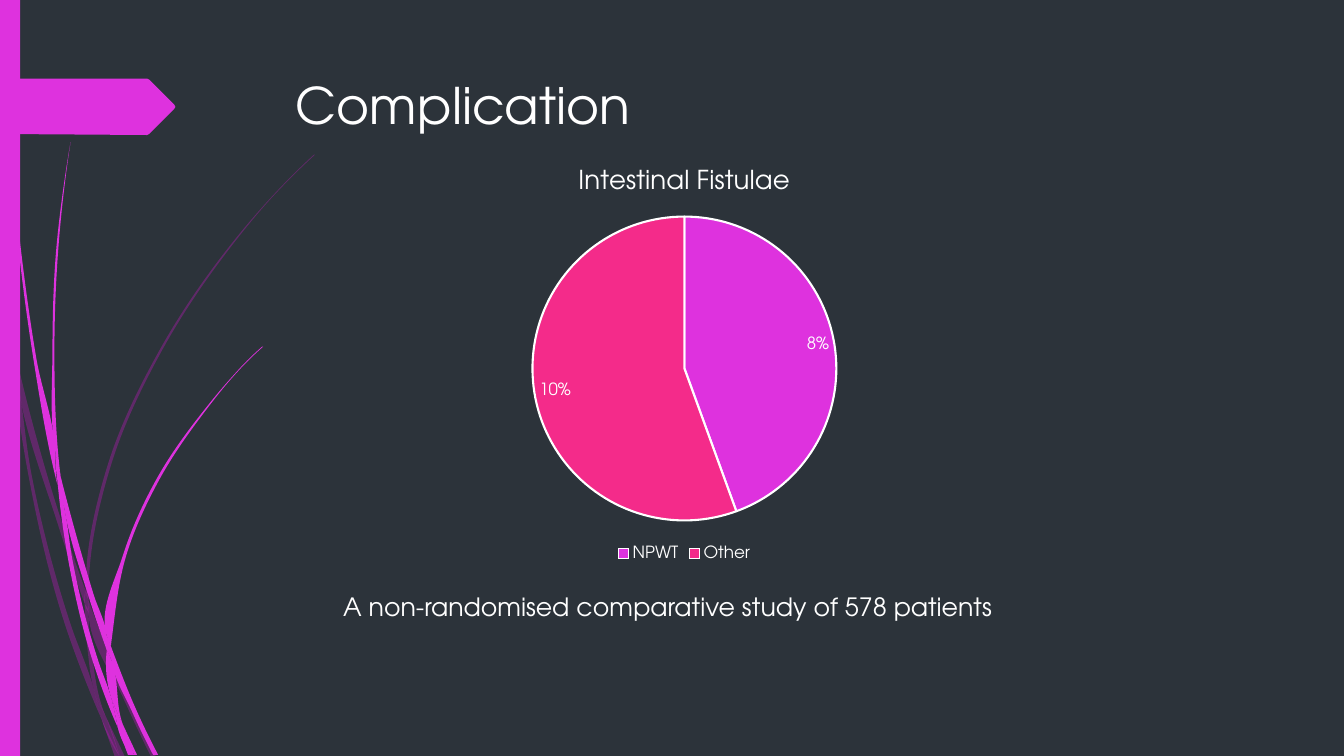
from dataclasses import dataclass
from math import dist

from lxml.etree import Element, SubElement
from pptx import Presentation
from pptx.chart.data import CategoryChartData
from pptx.dml.color import RGBColor
from pptx.enum.chart import XL_CHART_TYPE, XL_LABEL_POSITION, XL_LEGEND_POSITION
from pptx.enum.shapes import MSO_SHAPE
from pptx.enum.text import MSO_ANCHOR
from pptx.oxml.ns import qn
from pptx.util import Emu, Inches, Pt

# Grid: square cells, 75 rows on the slide's height
CELL = Inches(0.1)
COLUMNS, ROWS = 133.33, 75
FONT = "TeX Gyre Adventor"
BACKGROUND, WHITE = "2C333A", "FFFFFF"
MAGENTA, PURPLE, PINK = "DE32DE", "B01CB0", "F42B8A"

Point = tuple[float, float]


@dataclass
class Box:
    left: float
    top: float
    width: float
    height: float

    def lengths(self) -> list[Emu]:
        return [cells(n) for n in (self.left, self.top, self.width, self.height)]


@dataclass
class Blade:
    """A piece of grass, given by points down its two edges."""
    left_edge: list[Point]
    right_edge: list[Point]


@dataclass
class Label:
    text: str
    box: Box
    size: float
    wrap: bool


@dataclass
class Slice:
    name: str
    value: float
    color: str


FAINT_BLADES = [
    Blade([(0, 29.9), (1, 34.4), (1.1, 35)], [(0, 28.2), (0.9, 32.2), (1.1, 35)]),
    Blade([(1.4, 34.5), (1.7, 37.6), (5.8, 52.2), (8.4, 59.9)],
          [(1.4, 34.5), (6.2, 52), (8.5, 58.6)]),
    Blade([(8.8, 59.6), (8.8, 61), (12.3, 69.4), (15, 75.1)],
          [(8.8, 59.6), (9.2, 60.7), (12.7, 69.2), (15.5, 75.1)]),
    Blade([(10.5, 71.1), (11.9, 75.1)], [(10.5, 71.1), (12.4, 75.1)]),
    Blade([(1.1, 35), (2.8, 47), (6.5, 62.1), (9.2, 69.3), (10.1, 71.4)],
          [(1.1, 35), (1.7, 37.6), (3.1, 46.9), (7, 61.9), (9.3, 68.3), (9.9, 70.7),
           (10.1, 71.4)]),
    Blade([(8.4, 59.9), (8.7, 64.6), (9.3, 68.3), (9.6, 69.2), (10.5, 71.1)],
          [(8.4, 59.9), (8.8, 60.8), (8.8, 61), (9.1, 64.6), (10.3, 70.6), (10.5, 71.1)]),
    Blade([(31.2, 15.3), (28.9, 17.5), (26.8, 19.7), (22.8, 24.4), (15.8, 34.8),
           (10.7, 46.1), (8.5, 58.4), (8.5, 58.6), (8.8, 59.6)],
          [(31.2, 15.4), (29, 17.5), (26.8, 19.8), (22.9, 24.5), (16, 34.9),
           (11, 46.2), (8.8, 58.4), (8.8, 59.6)]),
    Blade([(10.1, 71.4), (11.4, 75.1)], [(10.1, 71.4), (11.9, 75.1)]),
    Blade([(8.5, 58.6), (8.4, 59.9), (8.8, 60.8)], [(8.5, 58.6), (8.8, 59.6), (8.8, 61)]),
    Blade([(9.3, 68.3), (9.9, 70.7), (10.1, 71.4), (11.9, 75.1)],
          [(9.3, 68.3), (9.6, 69.2), (10.5, 71.1), (11.9, 75.1)]),
]
BRIGHT_BLADES = [
    Blade([(0.3, 0), (0.4, 4.8), (0.7, 11), (1.7, 23.3), (3.3, 35.5), (5.6, 47.7),
           (5.7, 48.1)],
          [(0.4, 0), (0.5, 4.8), (0.8, 10.9), (1.9, 23.2), (3.6, 35.5), (5.5, 45.3),
           (5.5, 45.7), (5.7, 48.1)]),
    Blade([(6, 47.2), (6.4, 50.5), (8.8, 59.2), (10.6, 64.5)],
          [(6, 47.2), (9.3, 59), (10.6, 63.1), (10.6, 64.5)]),
    Blade([(11, 64.1), (11.1, 65.6), (13.2, 70.8), (15.2, 74.9)],
          [(11, 64.1), (11.3, 64.9), (13.6, 70.6), (15.7, 74.9)]),
    Blade([(5.7, 47.7), (6.8, 55.7), (9.3, 65.9), (11.1, 70.8), (11.7, 72.2)],
          [(5.7, 47.7), (6.4, 50.5), (7.2, 55.6), (9.8, 65.7), (11, 69.1), (11.6, 71.7),
           (11.7, 72.2)]),
    Blade([(7, 14.1), (6.2, 19.3), (5.6, 24.5), (5.2, 34.9), (5.5, 44.9), (6, 47.2)],
          [(7, 14.1), (6.3, 19.3), (5.8, 24.5), (5.4, 34.9), (5.8, 45.3), (6, 47.2)]),
    Blade([(12.2, 71.9), (13.3, 74.9)], [(12.2, 71.9), (13.6, 74.9)]),
    Blade([(5.5, 44.9), (5.5, 45.3), (5.7, 47.7), (6.4, 50.5)],
          [(5.5, 44.9), (6, 47.2), (6.4, 50.5)]),
    Blade([(26, 34.4), (24.5, 35.8), (23.1, 37.3), (20.4, 40.5), (15.6, 47.4),
           (12.2, 55.1), (10.6, 63.1), (11, 64.1)],
          [(26.1, 34.4), (24.5, 35.9), (23.1, 37.4), (20.5, 40.6), (15.8, 47.6),
           (12.5, 55.2), (11.1, 63.3), (11, 64.1)]),
    Blade([(11.7, 72.2), (12.7, 74.9)], [(11.7, 72.2), (13.1, 74.9)]),
    Blade([(10.6, 64.5), (11, 69.1), (11.6, 70.6), (12.2, 71.9)],
          [(10.6, 64.5), (10.9, 65.1), (11.1, 65.6), (12.1, 71.6), (12.2, 71.9)]),
    Blade([(10.6, 63.1), (10.6, 64.5), (10.9, 65.1), (11.1, 65.6)],
          [(10.6, 63.1), (11, 64.1), (11.1, 65.6)]),
    Blade([(11, 69.1), (11.6, 71.7), (11.7, 72.2), (13, 74.9)],
          [(11, 69.1), (11.6, 70.6), (12.2, 71.9), (13.3, 74.9)]),
]
SIDE_BAR = Box(0, 0, 2, ROWS)
PAGE_TAG = [(0, 7.8), (14.6, 7.8), (14.8, 7.9), (17.3, 10.4), (17.4, 10.6), (17.3, 10.8),
            (14.8, 13.3), (14.6, 13.4), (0, 13.3)]
CHART_BOX = Box(19.15, 14.8, 97.5, 41.3)
SLICES = [Slice("NPWT", 0.08, MAGENTA), Slice("Other", 0.1, PINK)]
LABELS = [
    Label("Complication", Box(28.35, 6.9, 97.5, 14), 36, True),
    Label("A non-randomised comparative study of 578 patients",
          Box(33.05, 58.2, 67.2, 4), 18, False),
]


def cells(count: float) -> Emu:
    return Emu(round(count * CELL))


def paint(fill, color: str) -> None:
    fill.solid()
    fill.fore_color.rgb = RGBColor.from_string(color)


def style_font(font, size: float) -> None:
    font.name = FONT
    font.size = Pt(size)
    font.color.rgb = RGBColor.from_string(WHITE)


def finish_shape(shape, color: str, opacity: int = 100) -> None:
    shape.shadow.inherit = False
    shape.line.fill.background()
    paint(shape.fill, color)
    if opacity < 100:
        color_element = shape.element.spPr.find(qn("a:solidFill")).find(qn("a:srgbClr"))
        SubElement(color_element, qn("a:alpha")).set("val", str(opacity * 1000))


def curve_segments(edge: list[Point]) -> list[list[Point]]:
    """Two handles and an end for each step of a smooth curve through the edge."""
    points = [complex(*point) for point in edge]
    spans = [dist(a, b) for a, b in zip(edge, edge[1:])]
    chords = [(b - a) / h for a, b, h in zip(points, points[1:], spans)]
    inner = [(u * k + v * h) / (h + k)
             for u, v, h, k in zip(chords, chords[1:], spans, spans[1:])]
    first = 2 * chords[0] - inner[0] if inner else chords[0]
    last = 2 * chords[-1] - inner[-1] if inner else chords[-1]
    slopes = [first, *inner, last]
    return [[(p.real, p.imag) for p in (a + u * h / 3, b - v * h / 3, b)]
            for a, b, u, v, h in zip(points, points[1:], slopes, slopes[1:], spans)]


def draw_outline(slide, outline: list[Point]):
    start, *rest = [(cells(x), cells(y)) for x, y in outline]
    builder = slide.shapes.build_freeform(*start)
    builder.add_line_segments(rest, close=True)
    return builder.convert_to_shape()


def draw_blade(slide, blade: Blade, color: str, opacity: int) -> None:
    left, right = blade.left_edge, blade.right_edge[::-1]
    segments = curve_segments(left)
    if left[-1] != right[0]:
        segments += curve_segments([left[-1], right[0]])
    segments += curve_segments(right)
    shape = draw_outline(slide, [left[0]] + [segment[-1] for segment in segments])
    # Bend each straight step with its two handles
    for line, handles in zip(list(shape.element.iter(qn("a:lnTo"))), segments):
        line.tag = qn("a:cubicBezTo")
        for index, (x, y) in enumerate(handles[:2]):
            handle = Element(qn("a:pt"), x=str(cells(x) - shape.left),
                             y=str(cells(y) - shape.top))
            line.insert(index, handle)
    finish_shape(shape, color, opacity)


def draw_label(slide, label: Label) -> None:
    frame = slide.shapes.add_textbox(*label.box.lengths()).text_frame
    frame.word_wrap = label.wrap
    frame.vertical_anchor = MSO_ANCHOR.TOP
    run = frame.paragraphs[0].add_run()
    run.text = label.text
    style_font(run.font, label.size)


def draw_pie(slide, title: str, slices: list[Slice], box: Box) -> None:
    data = CategoryChartData(number_format="0%")
    data.categories = [item.name for item in slices]
    data.add_series(title, [item.value for item in slices])
    chart = slide.shapes.add_chart(XL_CHART_TYPE.PIE, *box.lengths(), data).chart
    style_font(chart.font, 10)
    # Title and legend
    chart.has_title = True
    run = chart.chart_title.text_frame.paragraphs[0].add_run()
    run.text = title
    style_font(run.font, 18.6)
    run.font.bold = False
    chart.has_legend = True
    chart.legend.position = XL_LEGEND_POSITION.BOTTOM
    chart.legend.include_in_layout = False
    style_font(chart.legend.font, 12)
    # Slices and their values
    plot = chart.plots[0]
    plot.vary_by_categories = True
    for index, item in enumerate(slices):
        point_format = plot.series[0].points[index].format
        paint(point_format.fill, item.color)
        paint(point_format.line.fill, WHITE)
        point_format.line.width = Pt(1.5)
    labels = plot.series[0].data_labels
    labels.show_value = True
    labels.number_format = "0%"
    labels.number_format_is_linked = False
    labels.position = XL_LABEL_POSITION.BEST_FIT
    style_font(labels.font, 12)


presentation = Presentation()
presentation.slide_width, presentation.slide_height = cells(COLUMNS), cells(ROWS)
slide = presentation.slides.add_slide(presentation.slide_layouts[6])
paint(slide.background.fill, BACKGROUND)
# Decoration on the left
for blades, color, opacity in ((FAINT_BLADES, PURPLE, 40), (BRIGHT_BLADES, MAGENTA, 100)):
    for blade in blades:
        draw_blade(slide, blade, color, opacity)
finish_shape(slide.shapes.add_shape(MSO_SHAPE.RECTANGLE, *SIDE_BAR.lengths()), MAGENTA)
finish_shape(draw_outline(slide, PAGE_TAG), MAGENTA)
# Content
draw_pie(slide, "Intestinal Fistulae", SLICES, CHART_BOX)
for label in LABELS:
    draw_label(slide, label)
presentation.save("out.pptx")
